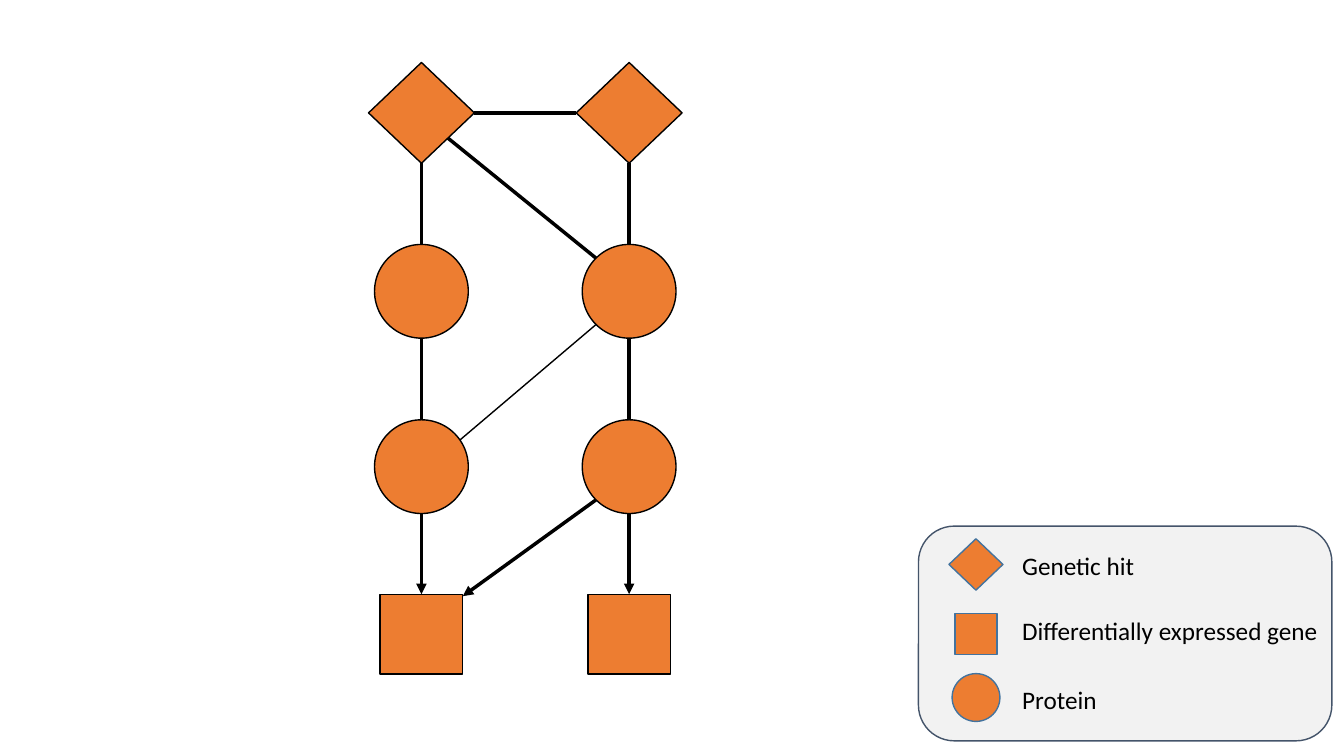
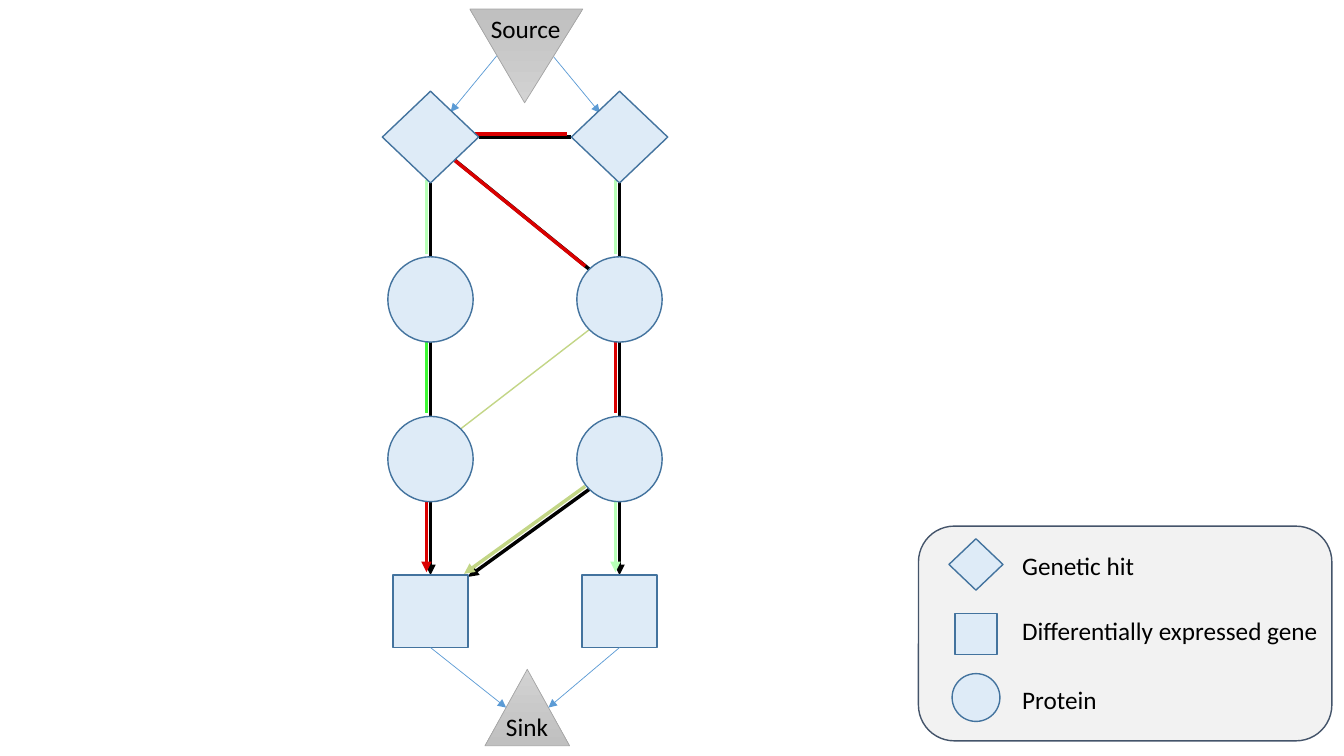
from lxml.etree import SubElement
from pptx import Presentation
from pptx.dml.color import RGBColor as RGB
from pptx.enum.shapes import MSO_CONNECTOR as Link, MSO_SHAPE as Form
from pptx.enum.text import MSO_AUTO_SIZE as Fit
from pptx.oxml.ns import qn
from pptx.util import Inches, Pt

FONT = "Calibri"
BLACK = RGB(0x00, 0x00, 0x00)
ORANGE = RGB(0xED, 0x7D, 0x31)
PALE = RGB(0xDE, 0xEB, 0xF7)
RIM = RGB(0x43, 0x73, 0x9E)
PANEL = RGB(0xF2, 0xF2, 0xF2)
SLATE = RGB(0x44, 0x54, 0x6A)
BLUE = RGB(0x5B, 0x9B, 0xD5)
RED = RGB(0xDA, 0x00, 0x00)
MINT = RGB(0xB7, 0xFF, 0xB7)
GREEN = RGB(0x3E, 0xF7, 0x35)
OLIVE = RGB(0xC3, 0xD6, 0x86)
GREY = RGB(0xA5, 0xA5, 0xA5)
LIGHT = RGB(0xD2, 0xD2, 0xD2)
DARK = RGB(0xC0, 0xC0, 0xC0)

SIZES = {Form.DIAMOND: (1.05, 1.0), Form.OVAL: (0.93, 0.93),
         Form.RECTANGLE: (0.82, 0.79)}
ROWS = ((Form.DIAMOND, 0), (Form.OVAL, 1.77),
        (Form.OVAL, 3.51), (Form.RECTANGLE, 5.17))
COLS = (0, 2.06)
KEY = ((Form.DIAMOND, 5.6, "Genetic hit", 5.41, 1.33),
       (Form.RECTANGLE, 6.29, "Differentially expressed gene", 6.06, 3.17),
       (Form.OVAL, 6.92, "Protein", 6.74, 0.95))

# An end is column, row, then the offset from the node centre in half sizes.
DIAG = 0.71
EDGES = (
    ((0, 0, 1, 0), (1, 0, -1, 0)),
    ((0, 0, 0.5, 0.5), (1, 1, -DIAG, -DIAG)),
    ((0, 0, 0, 1), (0, 1, 0, -1)),
    ((1, 0, 0, 1), (1, 1, 0, -1)),
    ((0, 1, 0, 1), (0, 2, 0, -1)),
    ((1, 1, 0, 1), (1, 2, 0, -1)),
    ((0, 2, 0, 1), (0, 3, 0, -1)),
    ((1, 2, 0, 1), (1, 3, 0, -1)),
    ((1, 2, -DIAG, DIAG), (0, 3, 1, -0.95)),
)
TINTS = (RED, RED, MINT, MINT, GREEN, RED, RED, MINT, OLIVE)
CROSS = ((0, 2, DIAG, -DIAG), (1, 1, -DIAG, DIAG))
INNER = ((0, 2, 0.15, 0), (1, 1, 0, 0.11))


class Deck:
    def __init__(self):
        self.file = Presentation()
        self.file.slide_width = Inches(13.33)
        self.file.slide_height = Inches(7.5)

    def page(self):
        self.slide = self.file.slides.add_slide(self.file.slide_layouts[6])

    def shape(self, form, box, fill, rim, width=1):
        item = self.slide.shapes.add_shape(form, *map(Inches, box))
        item.shadow.inherit = False
        if fill is not None:
            item.fill.solid()
            item.fill.fore_color.rgb = fill
        item.line.color.rgb = rim
        item.line.width = Pt(width)
        return item

    def symbol(self, form, mid, scale, fill, rim):
        """Draw a node symbol centred on mid."""
        wide, high = (size * scale for size in SIZES[form])
        box = (mid[0] - wide / 2, mid[1] - high / 2, wide, high)
        self.shape(form, box, fill, rim)

    def line(self, start, end, color, width, arrow=False):
        item = self.slide.shapes.add_connector(
            Link.STRAIGHT, *map(Inches, (*start, *end)))
        item.line.color.rgb = color
        item.line.width = Pt(width)
        props = item._element.spPr
        if arrow:
            SubElement(props.find(qn("a:ln")), qn("a:tailEnd"), type="triangle")
        SubElement(props, qn("a:effectLst"))

    def text(self, words, box):
        frame = self.slide.shapes.add_textbox(*map(Inches, box)).text_frame
        frame.word_wrap = False
        frame.auto_size = Fit.SHAPE_TO_FIT_TEXT
        run = frame.paragraphs[0].add_run()
        run.text = words
        run.font.name = FONT
        run.font.size = Pt(18)
        run.font.color.rgb = BLACK

    def cone(self, box, words, label):
        """Draw a grey gradient triangle with its label."""
        item = self.shape(Form.ISOSCELES_TRIANGLE, box, None, GREY, 0.5)
        item.fill.gradient()
        item.fill.gradient_angle = 270
        for stop, color in zip(item.fill.gradient_stops, (LIGHT, DARK)):
            stop.color.rgb = color
        self.text(words, label)
        return item

    def legend(self, fill):
        self.shape(Form.ROUNDED_RECTANGLE, (9.11, 5.22, 4.1, 2.13), PANEL, SLATE)
        for form, mid, words, top, wide in KEY:
            self.symbol(form, (9.68, mid), 0.51, fill, RIM)
            self.text(words, (10.04, top, wide, 0.4))


class Net:
    """Two columns of nodes, scaled about the first diamond."""

    def __init__(self, deck, left, top, scale):
        self.deck, self.left, self.top, self.scale = deck, left, top, scale

    def point(self, col, row, across=0, down=0):
        form, drop = ROWS[row]
        wide, high = SIZES[form]
        return (self.left + self.scale * (COLS[col] + across * wide / 2),
                self.top + self.scale * (drop + down * high / 2))

    def edges(self, tints, shift=(0, 0)):
        for ends, tint in zip(EDGES, tints):
            start, end = ([a + b for a, b in zip(self.point(*spot), shift)]
                          for spot in ends)
            self.deck.line(start, end, tint, 2.5, arrow=ends[1][1] == 3)

    def cross(self, ends, tint):
        """Draw the thin edge between the columns."""
        self.deck.line(*(self.point(*spot) for spot in ends), tint, 1)

    def nodes(self, fill, rim):
        for col in range(len(COLS)):
            for row, (form, _) in enumerate(ROWS):
                self.deck.symbol(form, self.point(col, row), self.scale, fill, rim)


def plain(deck):
    deck.page()
    net = Net(deck, 4.18, 1.12, 1)
    net.cross(INNER, BLACK)
    net.edges([BLACK] * len(EDGES))
    net.nodes(ORANGE, BLACK)
    deck.legend(ORANGE)


def flow(deck):
    """Build the network with coloured flow from source to sink."""
    deck.page()
    net = Net(deck, 4.27, 1.36, 0.91)
    net.edges([BLACK] * len(EDGES))
    net.edges(TINTS, (-0.04, -0.03))
    net.cross(CROSS, OLIVE)
    for start, end in (((5.48, 0.55), (5.95, 1.12)), ((4.93, 0.55), (4.47, 1.11))):
        deck.line(start, end, BLUE, 0.5, arrow=True)
    deck.legend(PALE)
    net.nodes(PALE, RIM)
    source = deck.cone((4.66, 0.09, 1.12, 0.93), "Source", (4.77, 0.08, 0.9, 0.4))
    source.rotation = 180
    source.adjustments[0] = 0.515
    deck.cone((4.81, 6.64, 0.84, 0.76), "Sink", (4.92, 7.01, 0.62, 0.4))
    for col, end in enumerate(((5.02, 7.02), (5.44, 7.02))):
        deck.line(net.point(col, 3, 0, 1), end, BLUE, 0.5, arrow=True)


def main():
    deck = Deck()
    plain(deck)
    flow(deck)
    deck.file.save("out.pptx")


if __name__ == "__main__":
    main()
